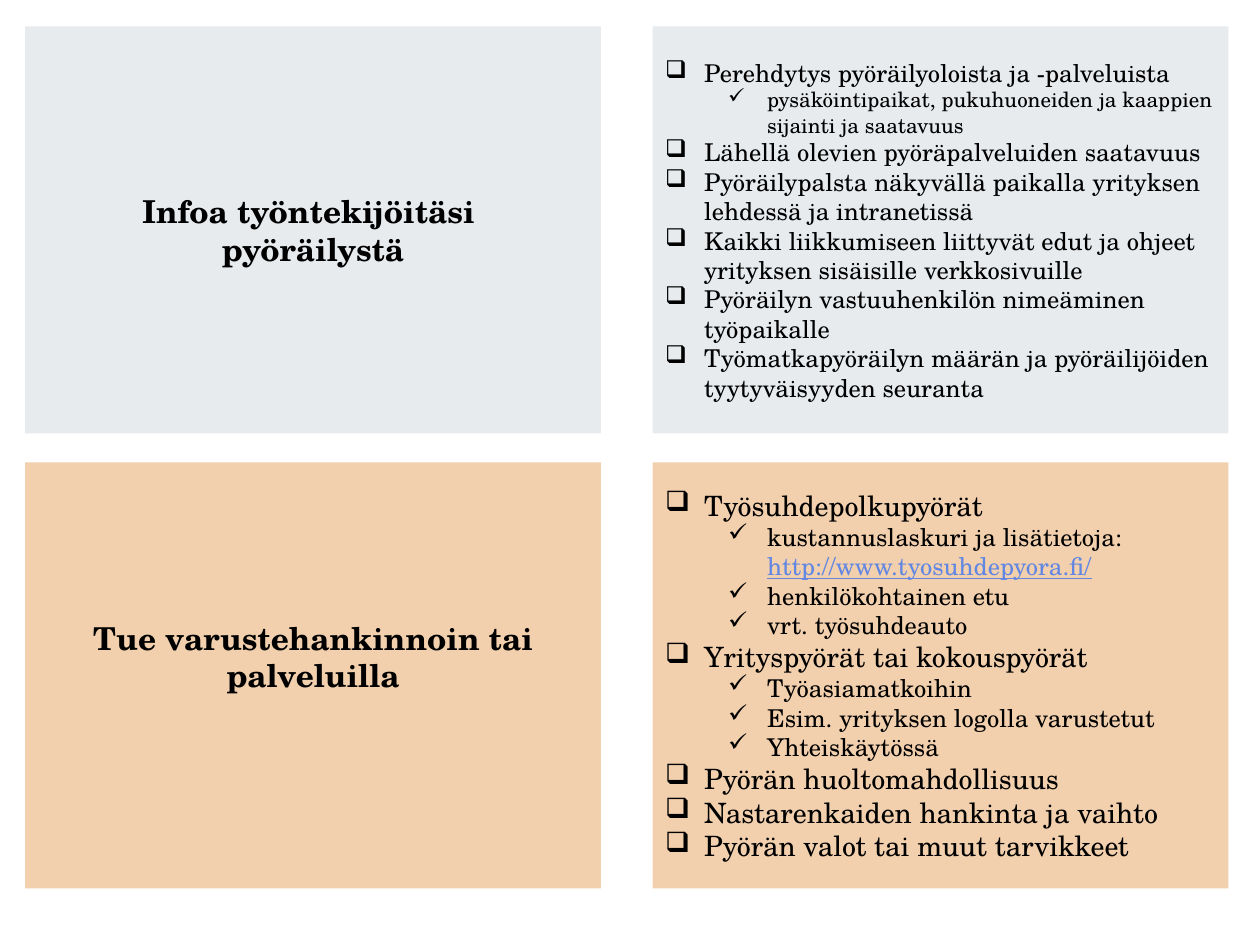
from lxml.etree import SubElement
from pptx import Presentation
from pptx.dml.color import RGBColor
from pptx.enum.shapes import MSO_SHAPE
from pptx.enum.text import MSO_ANCHOR, PP_ALIGN
from pptx.oxml.ns import qn
from pptx.util import Inches, Pt

THEME = {
    "font": "TeX Gyre Schola",
    "text": RGBColor.from_string("000000"),
    "link": RGBColor.from_string("6187E3"),
    "grey": RGBColor.from_string("E7EBEE"),
    "peach": RGBColor.from_string("F2D0AD"),
    "title": 18,
}
MARKS = [("❑", 0.31), ("✓", 0.81)]
HANG = 0.31
TITLE_LEFT, LIST_LEFT, WIDTH = 0.2, 5.18, 4.57

rows = [
    {
        "top": 0.21, "height": 3.23, "fill": "grey", "sizes": (14, 12), "lift": 0.05,
        "title": ["Infoa työntekijöitäsi ", "pyöräilystä"],
        "items": [
            (0, "Perehdytys pyöräilyoloista ja -palveluista"),
            (1, "pysäköintipaikat, pukuhuoneiden ja kaappien sijainti ja saatavuus"),
            (0, "Lähellä olevien pyöräpalveluiden saatavuus"),
            (0, "Pyöräilypalsta näkyvällä paikalla yrityksen lehdessä ja intranetissä"),
            (0, "Kaikki liikkumiseen liittyvät edut ja ohjeet yrityksen sisäisille verkkosivuille"),
            (0, "Pyöräilyn vastuuhenkilön nimeäminen työpaikalle"),
            (0, "Työmatkapyöräilyn määrän ja pyöräilijöiden tyytyväisyyden seuranta"),
        ],
    },
    {
        "top": 3.67, "height": 3.38, "fill": "peach", "sizes": (16, 14), "lift": 0.35,
        "title": ["Tue varustehankinnoin tai palveluilla"],
        "items": [
            (0, "Työsuhdepolkupyörät"),
            (1, "kustannuslaskuri ja lisätietoja: ", "http://www.tyosuhdepyora.fi/"),
            (1, "henkilökohtainen etu"),
            (1, "vrt. työsuhdeauto"),
            (0, "Yrityspyörät tai kokouspyörät"),
            (1, "Työasiamatkoihin"),
            (1, "Esim. yrityksen logolla varustetut"),
            (1, "Yhteiskäytössä"),
            (0, "Pyörän huoltomahdollisuus"),
            (0, "Nastarenkaiden hankinta ja vaihto"),
            (0, "Pyörän valot tai muut tarvikkeet"),
        ],
    },
]

prs = Presentation()
prs.slide_width, prs.slide_height = Inches(10), Inches(7.5)
slide = prs.slides.add_slide(prs.slide_layouts[6])


def add_panel(left, row):
    panel = slide.shapes.add_shape(
        MSO_SHAPE.RECTANGLE, Inches(left), Inches(row["top"]), Inches(WIDTH), Inches(row["height"])
    )
    panel.shadow.inherit = False
    panel.fill.solid()
    panel.fill.fore_color.rgb = THEME[row["fill"]]
    panel.line.fill.background()
    frame = panel.text_frame
    frame.word_wrap = True
    frame.vertical_anchor = MSO_ANCHOR.MIDDLE
    return frame


def add_text(paragraph, text, size, color="text", **formats):
    run = paragraph.add_run()
    run.text = text
    run.font.color.rgb = THEME[color]
    for name, value in {"name": THEME["font"], "size": Pt(size), **formats}.items():
        setattr(run.font, name, value)


for row in rows:
    title = add_panel(TITLE_LEFT, row)
    title.margin_bottom = Inches(row["lift"])
    for index, line in enumerate(row["title"]):
        paragraph = title.add_paragraph() if index else title.paragraphs[0]
        paragraph.alignment = PP_ALIGN.CENTER
        add_text(paragraph, line, THEME["title"], bold=True)

    checklist = add_panel(LIST_LEFT, row)
    for index, (level, text, *links) in enumerate(row["items"]):
        paragraph = checklist.add_paragraph() if index else checklist.paragraphs[0]
        paragraph.alignment = PP_ALIGN.LEFT
        paragraph.level = level
        mark, indent = MARKS[level]
        properties = paragraph._p.get_or_add_pPr()
        properties.set("marL", str(Inches(indent)))
        properties.set("indent", str(-Inches(HANG)))
        SubElement(properties, qn("a:buChar"), char=mark)
        add_text(paragraph, text, row["sizes"][level])
        for link in links:
            add_text(paragraph, link, row["sizes"][level], "link", underline=True)

prs.save("out.pptx")
